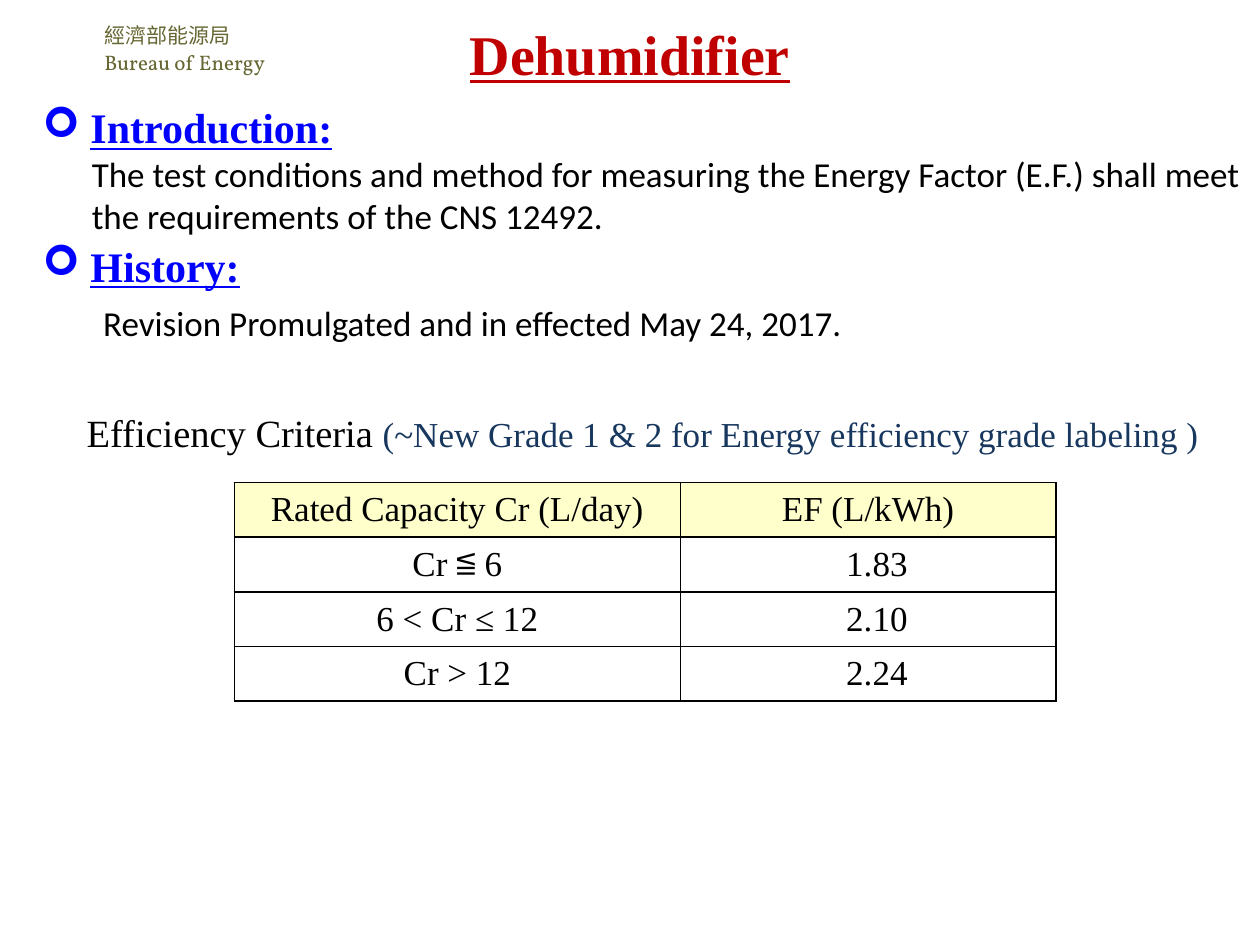
from lxml import etree
from pptx import Presentation
from pptx import util as u
from pptx.dml import color
from pptx.enum import text
from pptx.oxml import ns

SERIF, SANS = "Times New Roman", "Calibri"
BLACK, BLUE, NAVY, RED = "000000", "0000FF", "17375E", "C00000"
OLIVE, CREAM = "666633", "FFFFCC"


def rgb(value):
    return color.RGBColor.from_string(value)


def style_font(font, size, name, hue, heading=False):
    """Headings are bold and underlined."""
    font.size, font.name = u.Pt(size), name
    font.color.rgb = rgb(hue)
    font.bold = font.underline = heading


def indent(paragraph, left, first=0):
    properties = paragraph._p.get_or_add_pPr()
    properties.set("marL", str(u.Inches(left)))
    properties.set("indent", str(u.Inches(first)))
    return properties


def border_cell(cell, hue=BLACK, width=1):
    properties = cell._tc.get_or_add_tcPr()
    for position, side in enumerate(("lnL", "lnR", "lnT", "lnB")):
        line = etree.Element(ns.qn(f"a:{side}"), w=str(u.Pt(width)))
        fill = etree.SubElement(line, ns.qn("a:solidFill"))
        etree.SubElement(fill, ns.qn("a:srgbClr"), val=hue)
        properties.insert(position, line)


class SlideBuilder:
    def __init__(self, deck):
        self.slide = deck.slides.add_slide(deck.slide_layouts[5])

    def title(self, wording, left, top, width, height):
        title = self.slide.shapes.title
        title.left, title.top = u.Inches(left), u.Inches(top)
        title.width, title.height = u.Inches(width), u.Inches(height)
        title.text_frame.text = wording
        title.text_frame.vertical_anchor = text.MSO_ANCHOR.MIDDLE
        paragraph = title.text_frame.paragraphs[0]
        paragraph.alignment = text.PP_ALIGN.CENTER
        style_font(paragraph.font, 32, SERIF, RED, heading=True)

    def text_box(self, wording, left, top, width, height):
        """Returns the paragraphs, one for each line of the wording."""
        box = self.slide.shapes.add_textbox(
            u.Inches(left), u.Inches(top), u.Inches(width), u.Inches(height))
        box.text_frame.word_wrap = True
        box.text_frame.text = wording
        return box.text_frame.paragraphs

    def agency(self, wording, *place):
        lines = self.text_box(wording, *place)
        for line in lines:
            style_font(line.font, 12, "Vollkorn", OLIVE)
        lines[1].space_before = u.Pt(1.2)

    def section(self, heading, body, *place, body_indent, body_gap=0):
        head, detail = self.text_box(f"{heading}\n{body}", *place)
        properties = indent(head, 0.38, -0.38)
        etree.SubElement(properties, ns.qn("a:buFont"), typeface="Wingdings")
        etree.SubElement(properties, ns.qn("a:buChar"), char="➢")
        style_font(head.font, 24, SERIF, BLUE, heading=True)
        indent(detail, body_indent)
        detail.space_before = u.Pt(body_gap)
        style_font(detail.font, 20, SANS, BLACK)

    def caption(self, label, remark, *place):
        line = self.text_box(label, *place)[0]
        style_font(line.runs[0].font, 22, SERIF, BLACK)
        note = line.add_run()
        note.text = remark
        style_font(note.font, 20, SERIF, NAVY)

    def table(self, rows, column_widths, left, top, height):
        table = self.slide.shapes.add_table(
            len(rows), len(column_widths), u.Inches(left), u.Inches(top),
            u.Inches(sum(column_widths)), u.Inches(height)).table
        table.first_row = table.horz_banding = False
        for column, width in zip(table.columns, column_widths):
            column.width = u.Inches(width)
        for r, row in enumerate(rows):
            for c, wording in enumerate(row):
                cell = table.cell(r, c)
                cell.text = wording
                cell.vertical_anchor = text.MSO_ANCHOR.MIDDLE
                if r == 0:
                    cell.fill.solid()
                    cell.fill.fore_color.rgb = rgb(CREAM)
                else:
                    cell.fill.background()
                border_cell(cell)
                paragraph = cell.text_frame.paragraphs[0]
                paragraph.alignment = text.PP_ALIGN.CENTER
                if r and c:
                    indent(paragraph, 0.14)
                style_font(paragraph.font, 20, SERIF, BLACK)


def main():
    deck = Presentation()
    deck.slide_width, deck.slide_height = u.Inches(10), u.Inches(7.5)
    page = SlideBuilder(deck)
    page.agency("經濟部能源局\nBureau of Energy", 0.73, 0.13, 1.59, 0.52)
    page.title("Dehumidifier", 0, 0.05, 10, 0.74)
    page.section(
        "Introduction:",
        "The test conditions and method for measuring the Energy Factor (E.F.) "
        "shall meet the requirements of the CNS 12492.",
        0.24, 0.76, 9.76, 1.18, body_indent=0.39)
    page.section(
        "History:", "Revision Promulgated and in effected May 24, 2017.",
        0.24, 1.86, 9.13, 0.93, body_indent=0.48, body_gap=6)
    page.caption(
        "Efficiency Criteria ",
        "(~New Grade 1 & 2 for Energy efficiency grade labeling )",
        0.59, 3.2, 9.06, 0.47)
    page.table(
        [("Rated Capacity Cr (L/day)", "EF (L/kWh)"),
         ("Cr ≦ 6", "1.83"),
         ("6 < Cr ≤ 12", "2.10"),
         ("Cr > 12", "2.24")],
        (3.54, 2.98), 1.86, 3.83, 1.73)
    deck.save("out.pptx")


if __name__ == "__main__":
    main()
